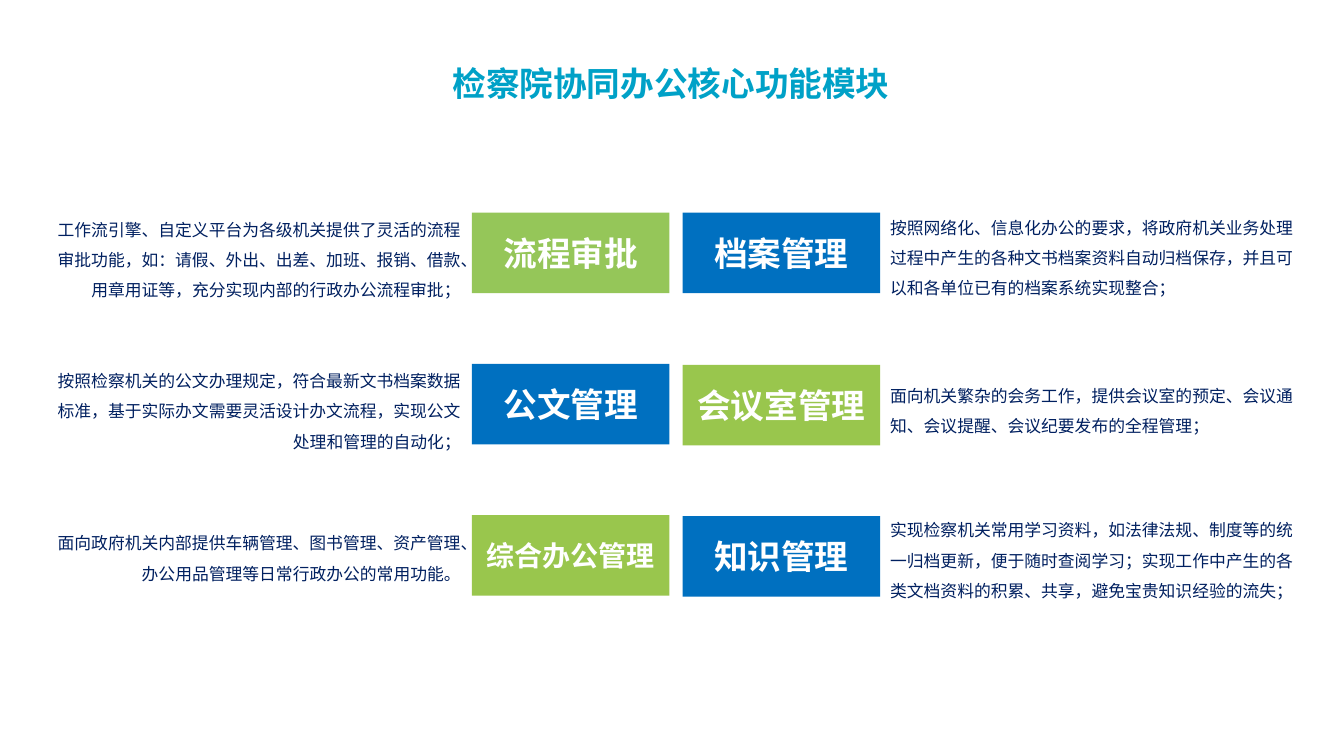
from lxml.etree import SubElement
from pptx import Presentation
from pptx.dml.color import RGBColor
from pptx.enum.shapes import MSO_SHAPE
from pptx.enum.text import MSO_ANCHOR, PP_ALIGN
from pptx.oxml.ns import qn
from pptx.util import Inches, Pt


def rgb(value):
    return RGBColor.from_string(value)


class ModuleSlide:
    font_name = "Noto Sans CJK SC"
    title_color = "00A1C7"
    label_color = "FFFFFF"
    body_color = "002060"

    def __init__(self, slide):
        self.slide = slide

    def add_text(self, shape, text, size, color, bold=False, anchor=MSO_ANCHOR.TOP,
                 align=PP_ALIGN.LEFT, spacing=1.0):
        frame = shape.text_frame
        paragraph = frame.paragraphs[0]
        run = paragraph.add_run()
        run.text = text
        font = run.font
        formats = [
            (frame, {"word_wrap": True, "vertical_anchor": anchor}),
            (paragraph, {"alignment": align, "line_spacing": spacing}),
            (font, {"size": Pt(size), "bold": bold, "name": self.font_name}),
            (font.color, {"rgb": rgb(color)}) if font.fill.solid() is None else None,
        ]
        for target, values in formats:
            for attribute, value in values.items():
                setattr(target, attribute, value)
        # Chinese glyphs take the East Asian typeface
        SubElement(run._r.get_or_add_rPr(), qn("a:ea"), typeface=self.font_name)

    def text_box(self, left, top, width, height):
        return self.slide.shapes.add_textbox(
            Inches(left), Inches(top), Inches(width), Inches(height))

    def title(self, text):
        self.add_text(self.text_box(4.39, 0.54, 4.69, 0.54), text, 24, self.title_color,
                      bold=True, anchor=MSO_ANCHOR.BOTTOM, spacing=0.9)

    def label(self, text, left, top, fill, size):
        block = self.slide.shapes.add_shape(
            MSO_SHAPE.RECTANGLE, Inches(left), Inches(top), Inches(1.96), Inches(0.8))
        block.shadow.inherit = False
        block.fill.solid()
        block.fill.fore_color.rgb = rgb(fill)
        block.line.fill.background()
        self.add_text(block, text, size, self.label_color, bold=True,
                      anchor=MSO_ANCHOR.MIDDLE, align=PP_ALIGN.CENTER)

    def description(self, text, left, top, height, align):
        self.add_text(self.text_box(left, top, 4.32, height), text, 12, self.body_color,
                      align=align, spacing=1.5)


BLUE, GREEN, SOFT_GREEN = "0070C0", "99C64D", "95C659"

# Each module: label, fill, label size, label top, description top and height, description
LEFT_MODULES = [
    ("流程审批", SOFT_GREEN, 24, 2.11, 2.03, 0.97,
     "工作流引擎、自定义平台为各级机关提供了灵活的流程审批功能，如：请假、外出、出差、加班、报销、借款、"
     "用章用证等，充分实现内部的行政办公流程审批；"),
    ("公文管理", BLUE, 24, 3.61, 3.53, 1.01,
     "按照检察机关的公文办理规定，符合最新文书档案数据标准，基于实际办文需要灵活设计办文流程，"
     "实现公文处理和管理的自动化；"),
    ("综合办公管理", GREEN, 20, 5.11, 5.14, 0.67,
     "面向政府机关内部提供车辆管理、图书管理、资产管理、办公用品管理等日常行政办公的常用功能。"),
]
RIGHT_MODULES = [
    ("档案管理", BLUE, 24, 2.11, 2.01, 1.01,
     "按照网络化、信息化办公的要求，将政府机关业务处理过程中产生的各种文书档案资料自动归档保存，"
     "并且可以和各单位已有的档案系统实现整合；"),
    ("会议室管理", GREEN, 24, 3.62, 3.68, 0.67,
     "面向机关繁杂的会务工作，提供会议室的预定、会议通知、会议提醒、会议纪要发布的全程管理；"),
    ("知识管理", BLUE, 24, 5.12, 5.01, 1.01,
     "实现检察机关常用学习资料，如法律法规、制度等的统一归档更新，便于随时查阅学习；"
     "实现工作中产生的各类文档资料的积累、共享，避免宝贵知识经验的流失；"),
]
# Each column: modules, label left, description left, description alignment
COLUMNS = [
    (LEFT_MODULES, 4.68, 0.35, PP_ALIGN.RIGHT),
    (RIGHT_MODULES, 6.77, 8.73, PP_ALIGN.LEFT),
]


def main():
    deck = Presentation()
    deck.slide_width, deck.slide_height = Inches(13.33), Inches(7.5)
    page = ModuleSlide(deck.slides.add_slide(deck.slide_layouts[6]))

    # Heading
    page.title("检察院协同办公核心功能模块")

    # Module labels with their descriptions on the outer side
    for modules, label_left, description_left, align in COLUMNS:
        for name, fill, size, label_top, top, height, description in modules:
            page.label(name, label_left, label_top, fill, size)
            page.description(description, description_left, top, height, align)

    deck.save("out.pptx")


if __name__ == "__main__":
    main()
